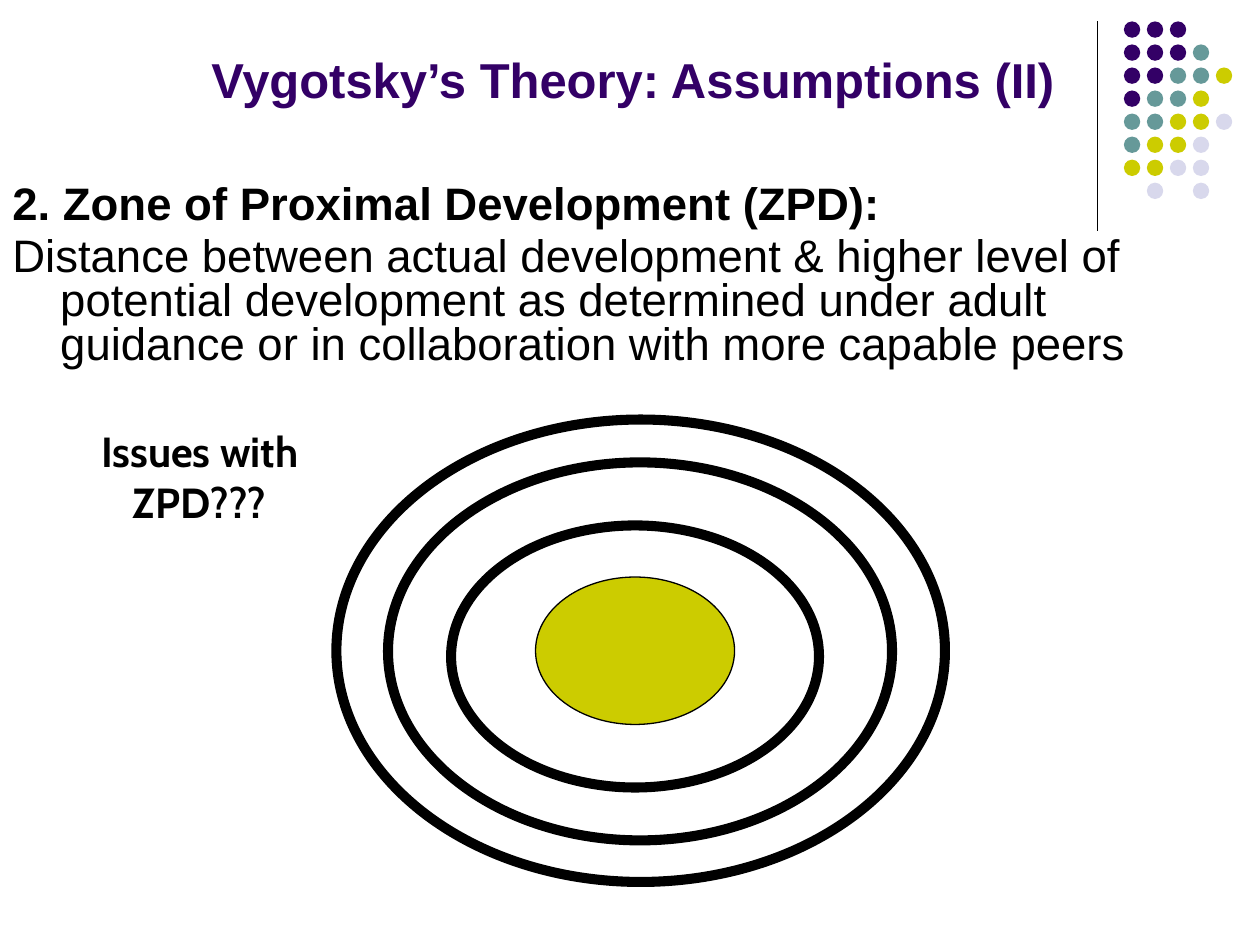
from dataclasses import dataclass

import pptx
import pptx.dml.color
import pptx.enum.shapes
import pptx.enum.text
import pptx.oxml.ns
import pptx.util
from lxml import etree

Inches = pptx.util.Inches
Pt = pptx.util.Pt
Align = pptx.enum.text.PP_ALIGN
Anchor = pptx.enum.text.MSO_ANCHOR


@dataclass(frozen=True)
class Theme:
    purple: str = "330066"
    teal: str = "669999"
    lime: str = "CCCC00"
    lavender: str = "D8D8EC"
    black: str = "000000"
    main_font: str = "Arial"
    note_font: str = "Cabin"
    title_size: float = 28
    body_size: float = 26
    note_size: float = 24
    thin: float = 0.75
    thick: float = 5.75


THEME = Theme()


def rgb(value):
    return pptx.dml.color.RGBColor.from_string(value)


def add_ellipse(shapes, box, fill=None, line_width=None):
    ellipse = shapes.add_shape(
        pptx.enum.shapes.MSO_SHAPE.OVAL, *(Inches(length) for length in box))
    ellipse.shadow.inherit = False
    if fill:
        ellipse.fill.solid()
        ellipse.fill.fore_color.rgb = rgb(fill)
    else:
        ellipse.fill.background()
    if line_width:
        ellipse.line.color.rgb = rgb(THEME.black)
        ellipse.line.width = Pt(line_width)
    else:
        ellipse.line.fill.background()


def add_text_frame(slide, box, anchor=Anchor.TOP):
    text_box = slide.shapes.add_textbox(*(Inches(length) for length in box))
    frame = text_box.text_frame
    frame.word_wrap = True
    frame.vertical_anchor = anchor
    return frame


def add_run(paragraph, text, size, color=THEME.black, bold=True, font=THEME.main_font):
    run = paragraph.add_run()
    run.text = text
    run.font.name = font
    run.font.size = Pt(size)
    run.font.bold = bold
    run.font.color.rgb = rgb(color)


def add_dot_ornament(slide, box):
    """Vertical rule with a grid of coloured dots to its right."""
    left, top, width, height = box
    rule = slide.shapes.add_connector(
        pptx.enum.shapes.MSO_CONNECTOR.STRAIGHT,
        Inches(left), Inches(top), Inches(left), Inches(top + height))
    rule.line.color.rgb = rgb(THEME.black)
    rule.line.width = Pt(THEME.thin)
    etree.SubElement(rule._element.spPr, pptx.oxml.ns.qn("a:effectLst"))

    colors = {"P": THEME.purple, "T": THEME.teal, "L": THEME.lime, "V": THEME.lavender}
    rows = ["PPP", "PPPT", "PPTTL", "PTTL", "TTLLV", "TLLV", "LLVV", " V V"]
    diameter = 0.13
    first_dot = left + 0.21
    column_pitch = (left + width - diameter - first_dot) / 4
    row_pitch = 1.28 / (len(rows) - 1)
    dots = slide.shapes.add_group_shape()
    for row, pattern in enumerate(rows):
        for column, key in enumerate(pattern):
            if key in colors:
                add_ellipse(
                    dots.shapes,
                    (first_dot + column * column_pitch, top + row * row_pitch,
                     diameter, diameter),
                    colors[key])


def add_title(slide, box):
    frame = add_text_frame(slide, box, Anchor.BOTTOM)
    add_run(frame.paragraphs[0], "Vygotsky’s Theory: Assumptions (II)",
            THEME.title_size, THEME.purple)


def add_definition(slide, box):
    """Heading and definition with a hanging indent."""
    frame = add_text_frame(slide, box)
    lines = [
        ("2. Zone of Proximal Development (ZPD):", True),
        ("Distance between actual development & higher level of potential "
         "development as determined under adult guidance or in collaboration "
         "with more capable peers", False),
    ]
    for index, (text, bold) in enumerate(lines):
        paragraph = frame.add_paragraph() if index else frame.paragraphs[0]
        paragraph.line_spacing = 0.8
        paragraph.space_before = Pt(0.2 * THEME.body_size)
        properties = paragraph._p.get_or_add_pPr()
        properties.set("marL", str(Inches(0.38)))
        properties.set("indent", str(Inches(-0.38)))
        add_run(paragraph, text, THEME.body_size, bold=bold)


def add_zone_rings(slide, box):
    """Filled core surrounded by three rings; insets are from the box corner."""
    left, top, width, height = box
    ellipses = [
        (1.58, 1.25, 1.58, 1.17, THEME.lime, THEME.thin),
        (0.91, 0.84, 2.92, 2.08, None, THEME.thick),
        (0.41, 0.34, 4, 3, None, THEME.thick),
        (0, 0, width, height, None, THEME.thick),
    ]
    for inset_x, inset_y, ring_width, ring_height, fill, line_width in ellipses:
        add_ellipse(slide.shapes,
                    (left + inset_x, top + inset_y, ring_width, ring_height),
                    fill, line_width)


def add_issues_note(slide, box):
    paragraph = add_text_frame(slide, box).paragraphs[0]
    paragraph.alignment = Align.CENTER
    add_run(paragraph, "Issues with ZPD???", THEME.note_size, font=THEME.note_font)


def main():
    presentation = pptx.Presentation()
    presentation.slide_width = Inches(10)
    presentation.slide_height = Inches(7.5)
    slide = presentation.slides.add_slide(presentation.slide_layouts[6])

    add_dot_ornament(slide, (8.71, 0.17, 1.07, 1.66))
    add_title(slide, (1.58, 0.33, 8, 0.58))
    add_definition(slide, (0, 1.42, 9.83, 6.58))
    add_zone_rings(slide, (2.67, 3.33, 4.83, 3.67))
    add_issues_note(slide, (0.67, 3.33, 1.83, 1.3))

    presentation.save("out.pptx")


if __name__ == "__main__":
    main()
